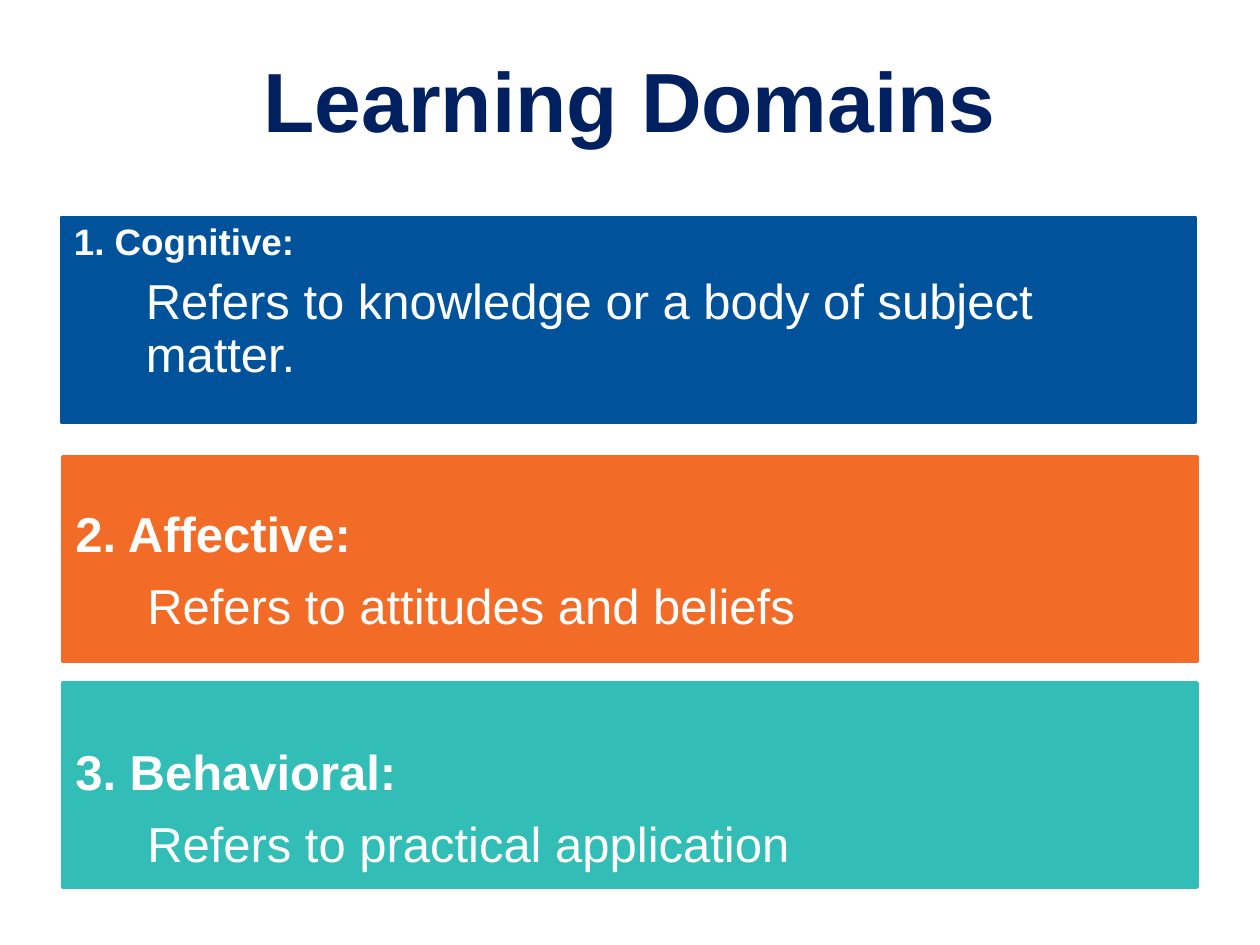
from dataclasses import dataclass

from pptx import Presentation
from pptx import util as u
from pptx.dml import color
from pptx.enum import shapes, text


@dataclass(frozen=True)
class Theme:
    font: str = "Arial"
    navy: str = "002060"
    white: str = "FFFFFF"
    blue: str = "00539B"
    orange: str = "F26C27"
    teal: str = "32BDB7"
    title: int = 48
    body: int = 28
    small: int = 21


def style(para, size, shade, bold):
    for span in para.runs:
        span.font.name = theme.font
        span.font.size = u.Pt(size)
        span.font.bold = bold
        span.font.color.rgb = color.RGBColor.from_string(shade)


theme = Theme()
deck = Presentation()
deck.slide_width, deck.slide_height = u.Cm(25.4), u.Cm(19.05)
page = deck.slides.add_slide(deck.slide_layouts[5])

title = page.shapes.title
title.left, title.top = u.Cm(1.75), u.Cm(0.28)
title.width, title.height = u.Cm(21.9), u.Cm(3.68)
title.text_frame.text = "Learning Domains"
title.text_frame.vertical_anchor = text.MSO_ANCHOR.MIDDLE
heading = title.text_frame.paragraphs[0]
heading.alignment = text.PP_ALIGN.CENTER
heading.line_spacing = 0.9
style(heading, theme.title, theme.navy, True)

domains = [
    ("1. Cognitive:", "Refers to knowledge or a body of subject matter.",
     theme.blue, theme.small, 1.24, 4.39, 0.13, 0.9),
    ("2. Affective:", "Refers to attitudes and beliefs",
     theme.orange, theme.body, 1.27, 9.22, 0.93, 1.0),
    ("3. Behavioral:", "Refers to practical application",
     theme.teal, theme.body, 1.27, 13.77, 1.18, 1.0),
]

for name, meaning, shade, name_size, left, top, inset, spacing in domains:
    box = page.shapes.add_shape(
        shapes.MSO_SHAPE.RECTANGLE, u.Cm(left), u.Cm(top), u.Cm(22.86), u.Cm(4.11))
    box.shadow.inherit = False
    box.fill.solid()
    box.fill.fore_color.rgb = color.RGBColor.from_string(shade)
    box.line.color.rgb = color.RGBColor.from_string(shade)
    box.line.width = u.Pt(2.25)

    frame = box.text_frame
    frame.word_wrap = True
    frame.vertical_anchor = text.MSO_ANCHOR.TOP
    frame.margin_top = u.Cm(inset)
    frame.text = f"{name}\n{meaning}"
    label, detail = frame.paragraphs
    for para in (label, detail):
        para.alignment = text.PP_ALIGN.LEFT
        para.line_spacing = spacing
    detail.space_before = u.Pt(7.5)
    indent = detail._p.get_or_add_pPr()
    indent.set("marL", str(u.Cm(1.45)))
    indent.set("indent", "0")
    style(label, name_size, theme.white, True)
    style(detail, theme.body, theme.white, False)

deck.save("out.pptx")
